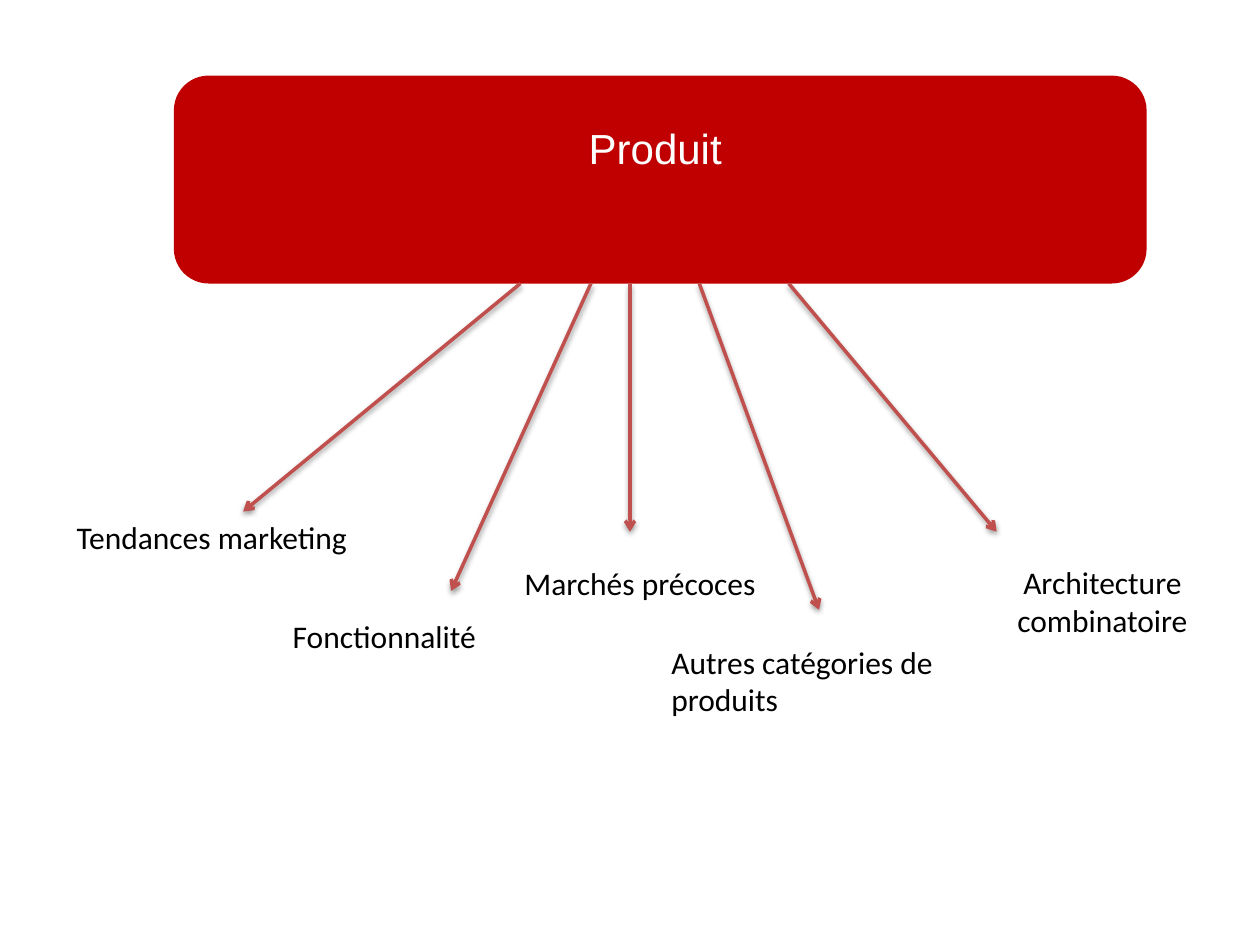
from dataclasses import dataclass

from lxml.etree import SubElement
from pptx import Presentation
from pptx.dml.color import RGBColor
from pptx.enum.shapes import MSO_CONNECTOR, MSO_SHAPE
from pptx.enum.text import MSO_ANCHOR, MSO_AUTO_SIZE, PP_ALIGN
from pptx.oxml.ns import qn
from pptx.util import Inches, Pt


@dataclass(frozen=True)
class Theme:
    banner: RGBColor = RGBColor(0xC0, 0x00, 0x00)
    arrow: RGBColor = RGBColor(0xC0, 0x50, 0x4D)
    title: RGBColor = RGBColor(0xFF, 0xFF, 0xFF)
    label: RGBColor = RGBColor(0x00, 0x00, 0x00)
    title_font: str = "Arial"
    label_font: str = "Calibri"
    title_size: Pt = Pt(24)
    label_size: Pt = Pt(18)
    arrow_width: Pt = Pt(2)


def set_text(shape, text, alignment, font_name, size, color):
    text_frame = shape.text_frame
    text_frame.text = text
    text_frame.word_wrap = True
    text_frame.auto_size = MSO_AUTO_SIZE.NONE
    text_frame.vertical_anchor = MSO_ANCHOR.TOP
    paragraph = text_frame.paragraphs[0]
    paragraph.alignment = alignment
    font = paragraph.runs[0].font
    font.name = font_name
    font.size = size
    font.color.rgb = color


def add_arrowhead_and_shadow(connector):
    properties = connector.element.spPr
    SubElement(properties.find(qn("a:ln")), qn("a:tailEnd"), type="arrow")
    effects = SubElement(properties, qn("a:effectLst"))
    shadow = SubElement(effects, qn("a:outerShdw"), blurRad=str(Pt(3.1)),
                        dist=str(Pt(1.6)), dir="5400000", rotWithShape="0")
    shadow_color = SubElement(shadow, qn("a:srgbClr"), val="000000")
    SubElement(shadow_color, qn("a:alpha"), val="38000")


theme = Theme()
presentation = Presentation()
presentation.slide_width = Inches(10)
presentation.slide_height = Inches(7.5)
slide = presentation.slides.add_slide(presentation.slide_layouts[5])

banner_top, banner_height = 0.6, 1.65
banner_bottom = banner_top + banner_height
banner = slide.shapes.add_shape(
    MSO_SHAPE.ROUNDED_RECTANGLE,
    Inches(1.38), Inches(banner_top), Inches(7.72), Inches(banner_height))
banner.shadow.inherit = False
banner.fill.solid()
banner.fill.fore_color.rgb = theme.banner
banner.line.fill.background()

title = slide.shapes.title
title.left, title.top = Inches(2.09), Inches(0.92)
title.width, title.height = Inches(6.22), Inches(0.5)
set_text(title, "Produit", PP_ALIGN.CENTER,
         theme.title_font, theme.title_size, theme.title)
title.element.addprevious(banner.element)

arrows = [
    (4.13, 1.93, 4.06),
    (4.69, 3.58, 4.69),
    (5, 5, 4.22),
    (5.55, 6.5, 4.84),
    (6.26, 7.91, 4.22),
]
for start_x, end_x, end_y in arrows:
    connector = slide.shapes.add_connector(
        MSO_CONNECTOR.STRAIGHT,
        Inches(start_x), Inches(banner_bottom), Inches(end_x), Inches(end_y))
    connector.line.color.rgb = theme.arrow
    connector.line.width = theme.arrow_width
    add_arrowhead_and_shadow(connector)

labels = [
    ("Tendances marketing", 0.51, 4.06, 0.4, PP_ALIGN.LEFT),
    ("Fonctionnalité", 1.87, 4.85, 0.4, PP_ALIGN.CENTER),
    ("Marchés précoces", 3.9, 4.43, 0.4, PP_ALIGN.CENTER),
    ("Autres catégories de produits", 5.23, 5.05, 0.71, PP_ALIGN.LEFT),
    ("Architecture combinatoire", 7.57, 4.42, 0.71, PP_ALIGN.CENTER),
]
for text, left, top, height, alignment in labels:
    label = slide.shapes.add_textbox(
        Inches(left), Inches(top), Inches(2.36), Inches(height))
    set_text(label, text, alignment,
             theme.label_font, theme.label_size, theme.label)

presentation.save("out.pptx")
